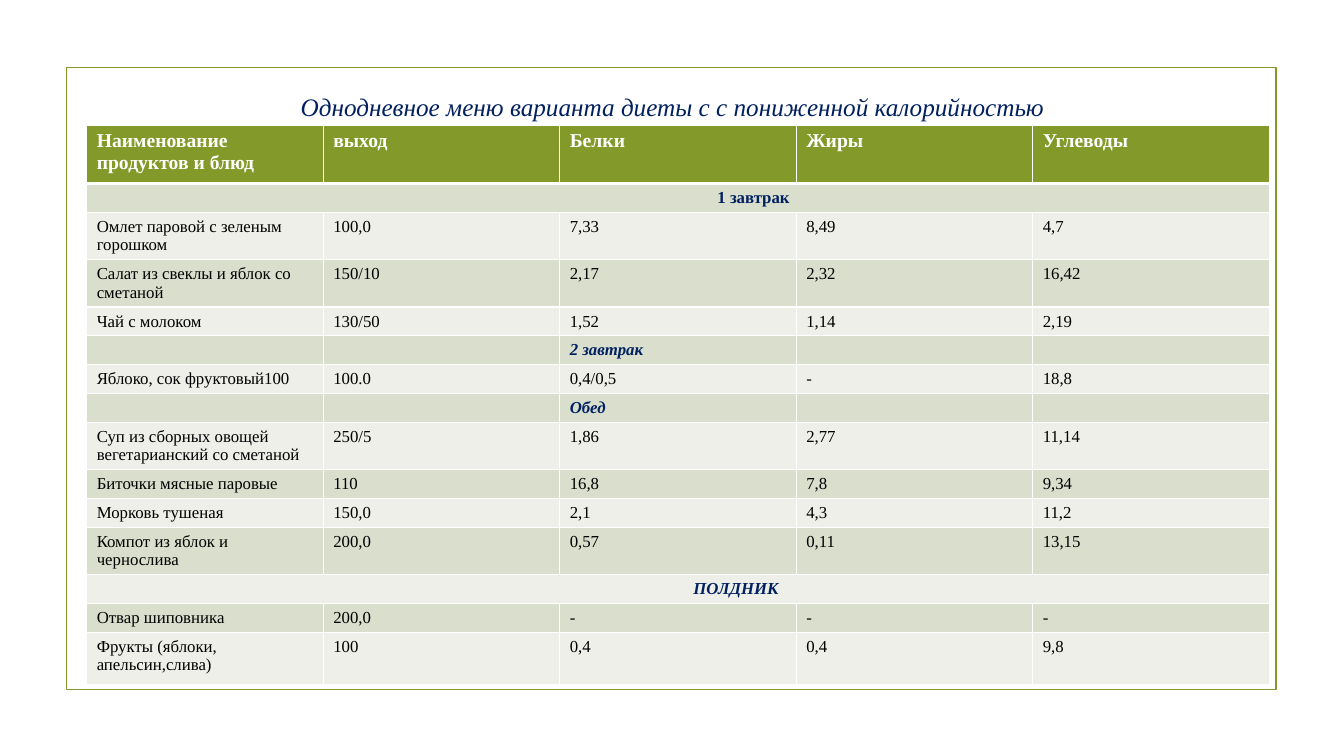
from lxml import etree
from pptx import Presentation
from pptx.dml.color import RGBColor
from pptx.enum.shapes import MSO_SHAPE
from pptx.enum.text import MSO_ANCHOR, PP_ALIGN
from pptx.oxml.ns import qn
from pptx.util import Inches, Pt

RECTANGLE = MSO_SHAPE.RECTANGLE
MIDDLE = MSO_ANCHOR.MIDDLE
CENTER = PP_ALIGN.CENTER

FONT = "Times New Roman"
GREEN, NAVY, WHITE, BLACK = "83992A", "002060", "FFFFFF", "000000"
BANDS = ("D9DECD", "EDEFE8")

HEADER = ["Наименование продуктов и блюд", "выход", "Белки", "Жиры", "Углеводы"]
MENU = [
    ["1 завтрак"],
    ["Омлет паровой с зеленым горошком", "100,0", "7,33", "8,49", "4,7"],
    ["Салат из свеклы и яблок со сметаной", "150/10", "2,17", "2,32", "16,42"],
    ["Чай с молоком", "130/50", "1,52", "1,14", "2,19"],
    ["", "", "2 завтрак", "", ""],
    ["Яблоко, сок фруктовый100", "100.0", "0,4/0,5", "-", "18,8"],
    ["", "", "Обед", "", ""],
    ["Суп из сборных овощей вегетарианский со сметаной", "250/5", "1,86", "2,77", "11,14"],
    ["Биточки мясные паровые", "110", "16,8", "7,8", "9,34"],
    ["Морковь тушеная", "150,0", "2,1", "4,3", "11,2"],
    ["Компот из яблок и чернослива", "200,0", "0,57", "0,11", "13,15"],
    ["ПОЛДНИК"],
    ["Отвар шиповника", "200,0", "-", "-", "-"],
    ["Фрукты (яблоки, апельсин,слива)", "100", "0,4", "0,4", "9,8"],
]
# Left margins that move the centred full-width headings right of the middle
HEADING_MARGINS = {"1 завтрак": 1.6, "ПОЛДНИК": 1.25}
ROW_HEIGHTS = [0.58, 0.28, 0.47, 0.47, 0.28, 0.28, 0.28, 0.28,
               0.47, 0.28, 0.28, 0.47, 0.28, 0.28, 0.52]


def color(value):
    return RGBColor.from_string(value)


class MenuSlide:
    def __init__(self, deck):
        self.page = deck.slides.add_slide(deck.slide_layouts[5])

    def style(self, para, size, ink, bold=False, italic=False):
        font = para.font
        font.name, font.size = FONT, Pt(size)
        font.bold, font.italic = bold, italic
        font.color.rgb = color(ink)

    def frame(self, left, top, width, height):
        box = self.page.shapes.add_shape(
            RECTANGLE, Inches(left), Inches(top), Inches(width), Inches(height))
        box.shadow.inherit = False
        box.fill.background()
        box.line.color.rgb = color(GREEN)
        box.line.width = Pt(1.25)

    def title(self, text, left, top, width, height):
        box = self.page.shapes.title
        box.left, box.top = Inches(left), Inches(top)
        box.width, box.height = Inches(width), Inches(height)
        box.text_frame.text = text
        box.text_frame.vertical_anchor = MIDDLE
        para = box.text_frame.paragraphs[0]
        para.alignment = CENTER
        self.style(para, 18, NAVY, italic=True)

    def cell(self, cell, text, fill, size, ink, bold=False, italic=False):
        cell.fill.solid()
        cell.fill.fore_color.rgb = color(fill)
        cell.text = text
        self.style(cell.text_frame.paragraphs[0], size, ink, bold, italic)

    def bottom_border(self, cell, ink, width):
        line = etree.Element(qn("a:lnB"), w=str(Pt(width)))
        fill = etree.SubElement(line, qn("a:solidFill"))
        etree.SubElement(fill, qn("a:srgbClr"), val=ink)
        cell._tc.get_or_add_tcPr().insert(0, line)

    def table(self, left, top, width):
        table = self.page.shapes.add_table(
            len(MENU) + 1, len(HEADER), Inches(left), Inches(top),
            Inches(width), Inches(sum(ROW_HEIGHTS))).table
        for row, height in zip(table.rows, ROW_HEIGHTS):
            row.height = Inches(height)
        for column, text in enumerate(HEADER):
            cell = table.cell(0, column)
            self.cell(cell, text, GREEN, 14, WHITE, bold=True)
            self.bottom_border(cell, WHITE, 3)
        for index, texts in enumerate(MENU, 1):
            fill = BANDS[(index - 1) % 2]
            is_heading = len(texts) == 1 or not texts[0]
            ink = NAVY if is_heading else BLACK
            for column, text in enumerate(texts):
                self.cell(table.cell(index, column), text, fill, 12, ink,
                          bold=is_heading, italic=is_heading and index > 1)
            if len(texts) == 1:
                first = table.cell(index, 0)
                first.merge(table.cell(index, len(HEADER) - 1))
                first.margin_left = Inches(HEADING_MARGINS[texts[0]])
                first.text_frame.paragraphs[0].alignment = CENTER


def main():
    deck = Presentation()
    deck.slide_width, deck.slide_height = Inches(13.33), Inches(7.5)
    slide = MenuSlide(deck)
    slide.frame(0.66, 0.67, 12, 6.17)
    slide.title("Однодневное меню варианта диеты с с пониженной калорийностью",
                1.42, 0.75, 10.5, 0.61)
    slide.table(0.86, 1.24, 11.73)
    deck.save("out.pptx")


if __name__ == "__main__":
    main()
